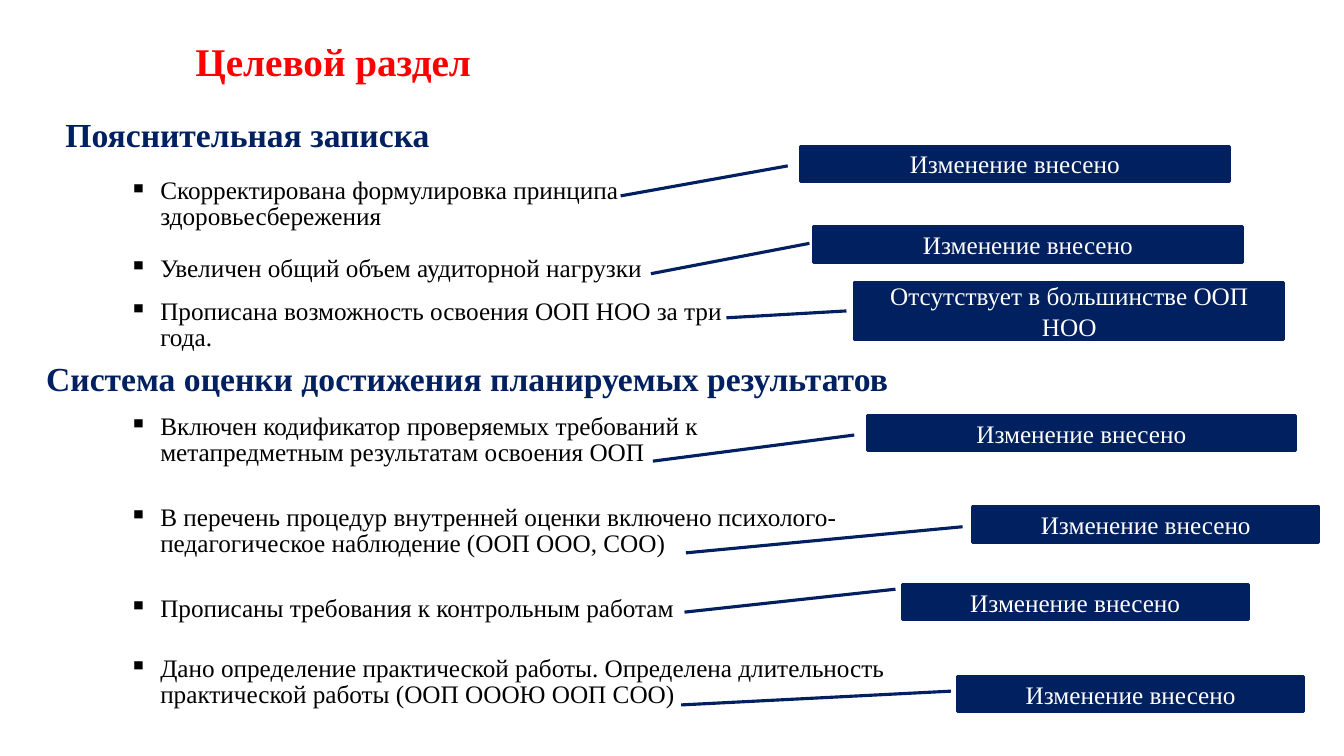
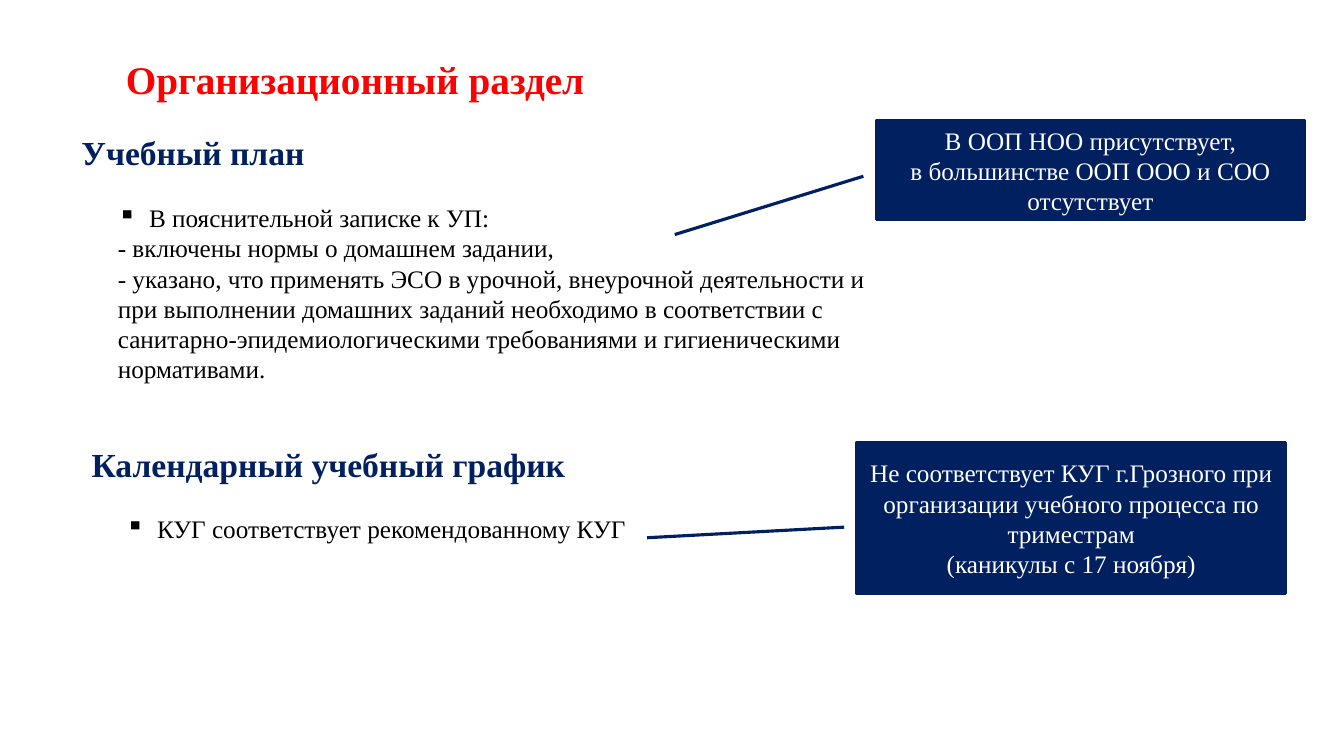
from dataclasses import dataclass

import pptx
import pptx.dml.color
import pptx.enum.shapes
import pptx.enum.text
import pptx.oxml
import pptx.oxml.ns
import pptx.util
from pptx.util import Inches

FONT = "Times New Roman"
RED, NAVY, BLACK, WHITE = "FF0000", "002060", "000000", "FFFFFF"
DONE = "Изменение внесено"


@dataclass(frozen=True)
class Style:
    size: int
    color: str
    bold: bool = False


TITLE = Style(28, RED, True)
HEAD = Style(24, NAVY, True)
BODY = Style(18, BLACK)
LABEL = Style(18, WHITE)


@dataclass(frozen=True)
class Line:
    text: str
    bullet: bool = False


@dataclass(frozen=True)
class Note:
    """Text box; a wide body text wraps."""
    left: float
    top: float
    width: float
    height: float
    style: Style
    lines: tuple[Line, ...]
    wrap: bool = False


@dataclass(frozen=True)
class Grid:
    """One-column bullet table of (row height, text)."""
    left: float
    top: float
    width: float
    rows: tuple[tuple[float, str], ...]


@dataclass(frozen=True)
class Callout:
    """Box with a leader; adjust gives its start y, x and end y, x."""
    left: float
    top: float
    width: float
    height: float
    adjust: tuple[float, float, float, float]
    lines: tuple[Line, ...] = (Line(DONE),)


def hue(code: str) -> pptx.dml.color.RGBColor:
    return pptx.dml.color.RGBColor.from_string(code)


def paint(fill, code: str) -> None:
    fill.solid()
    fill.fore_color.rgb = hue(code)


def add_mark(para) -> None:
    """Gives the paragraph a square bullet and a hanging indent."""
    props = para._p.get_or_add_pPr()
    props.set("marL", str(Inches(0.31)))
    props.set("indent", str(-Inches(0.31)))
    mark = pptx.oxml.parse_xml(
        f'<a:buChar {pptx.oxml.ns.nsdecls("a")} char="▪"/>')
    props.append(mark)


def write(frame, lines: tuple[Line, ...], style: Style,
          align=pptx.enum.text.PP_ALIGN.LEFT, space: float = 1.0) -> None:
    for i, line in enumerate(lines):
        para = frame.add_paragraph() if i else frame.paragraphs[0]
        para.alignment = align
        para.line_spacing = space
        if line.bullet:
            add_mark(para)
        run = para.add_run()
        run.text = line.text
        run.font.name = FONT
        run.font.size = pptx.util.Pt(style.size)
        run.font.bold = style.bold
        run.font.color.rgb = hue(style.color)


def draw_note(slide, note: Note) -> None:
    box = slide.shapes.add_textbox(Inches(note.left), Inches(note.top),
                                   Inches(note.width), Inches(note.height))
    frame = box.text_frame
    frame.word_wrap = note.wrap
    frame.auto_size = pptx.enum.text.MSO_AUTO_SIZE.SHAPE_TO_FIT_TEXT
    write(frame, note.lines, note.style)


def draw_grid(slide, grid: Grid) -> None:
    total = sum(height for height, _ in grid.rows)
    table = slide.shapes.add_table(
        len(grid.rows), 1, Inches(grid.left), Inches(grid.top),
        Inches(grid.width), Inches(total)).table
    for i, (height, text) in enumerate(grid.rows):
        table.rows[i].height = Inches(height)
        cell = table.cell(i, 0)
        cell.margin_left = cell.margin_right = Inches(0.03)
        cell.margin_top = cell.margin_bottom = 0
        paint(cell.fill, WHITE)
        write(cell.text_frame, (Line(text, True),), BODY, space=0.92)


def draw_callout(slide, call: Callout) -> None:
    shape = slide.shapes.add_shape(
        pptx.enum.shapes.MSO_SHAPE.LINE_CALLOUT_1,
        Inches(call.left), Inches(call.top),
        Inches(call.width), Inches(call.height))
    for i, value in enumerate(call.adjust):
        shape.adjustments[i] = value
    shape.shadow.inherit = False
    paint(shape.fill, NAVY)
    paint(shape.line.fill, NAVY)
    shape.line.width = pptx.util.Pt(2.25)
    frame = shape.text_frame
    frame.word_wrap = True
    frame.vertical_anchor = pptx.enum.text.MSO_ANCHOR.MIDDLE
    write(frame, call.lines, LABEL, pptx.enum.text.PP_ALIGN.CENTER)


DRAW = {Note: draw_note, Grid: draw_grid, Callout: draw_callout}

GOALS = (
    Note(1.84, 0.32, 2.96, 0.57, TITLE, (Line("Целевой раздел"),)),
    Note(0.55, 1.08, 3.85, 0.5, HEAD, (Line("Пояснительная записка"),)),
    Grid(1.25, 1.78, 6.51, (
        (0.77, "Скорректирована формулировка принципа здоровьесбережения"),
        (0.43, "Увеличен общий объем аудиторной нагрузки"),
        (0.61, "Прописана возможность освоения ООП НОО за три года."),
    )),
    Note(0.36, 3.5, 8.64, 0.5, HEAD,
         (Line("Система оценки достижения планируемых результатов"),)),
    Grid(1.25, 4.12, 7.58, (
        (0.9, "Включен кодификатор проверяемых требований к "
              "метапредметным результатам освоения ООП"),
        (0.9, "В перечень процедур внутренней оценки включено психолого- "
              "педагогическое наблюдение (ООП ООО, СОО)"),
        (0.6, "Прописаны требования к контрольным работам"),
        (0.6, "Дано определение практической работы. Определена "
              "длительность практической работы (ООП ОООЮ ООП СОО)"),
    )),
    Callout(7.94, 1.45, 4.25, 0.35, (0.56, -0.03, 1.41, -0.42)),
    Callout(8.07, 2.25, 4.25, 0.35, (0.47, -0.01, 1.33, -0.38)),
    Callout(8.48, 2.8, 4.25, 0.57, (0.5, -0.02, 0.62, -0.3),
            (Line("Отсутствует в большинстве ООП НОО"),)),
    Callout(8.6, 4.12, 4.25, 0.35, (0.56, -0.03, 1.3, -0.5)),
    Callout(9.65, 5.03, 3.43, 0.35, (0.56, -0.03, 1.3, -0.83)),
    Callout(8.95, 5.8, 3.43, 0.35, (0.13, -0.02, 0.78, -0.63)),
    Callout(9.5, 6.71, 3.43, 0.35, (0.42, -0.02, 0.81, -0.8)),
)

PLANS = (
    Note(1.15, 0.5, 4.9, 0.57, TITLE, (Line("Организационный раздел"),)),
    Note(0.71, 1.26, 2.44, 0.5, HEAD, (Line("Учебный план"),)),
    Note(0.81, 4.35, 4.95, 0.5, HEAD, (Line("Календарный учебный график"),)),
    Note(1.07, 1.96, 7.79, 1.92, BODY, (
        Line("В пояснительной записке к УП:", True),
        Line("- включены нормы о домашнем задании,"),
        Line("- указано, что применять ЭСО в урочной, внеурочной "
             "деятельности и при выполнении домашних заданий "
             "необходимо в соответствии с санитарно-эпидемиологическими "
             "требованиями и гигиеническими нормативами."),
    ), wrap=True),
    Note(1.15, 5.04, 5.34, 0.4, BODY,
         (Line("КУГ соответствует рекомендованному КУГ", True),)),
    Callout(8.69, 1.2, 4.25, 0.98, (0.56, -0.03, 1.15, -0.47), (
        Line("В ООП НОО присутствует,"),
        Line("в большинстве ООП ООО и СОО отсутствует"),
    )),
    Callout(8.5, 4.39, 4.25, 1.5, (0.56, -0.03, 0.63, -0.49), (
        Line("Не соответствует КУГ г.Грозного при организации "
             "учебного процесса по триместрам"),
        Line("(каникулы с 17 ноября)"),
    )),
)


def main() -> None:
    deck = pptx.Presentation()
    deck.slide_width, deck.slide_height = Inches(13.33), Inches(7.5)
    for parts in (GOALS, PLANS):
        slide = deck.slides.add_slide(deck.slide_layouts[6])
        for part in parts:
            DRAW[type(part)](slide, part)
    deck.save("out.pptx")


if __name__ == "__main__":
    main()
